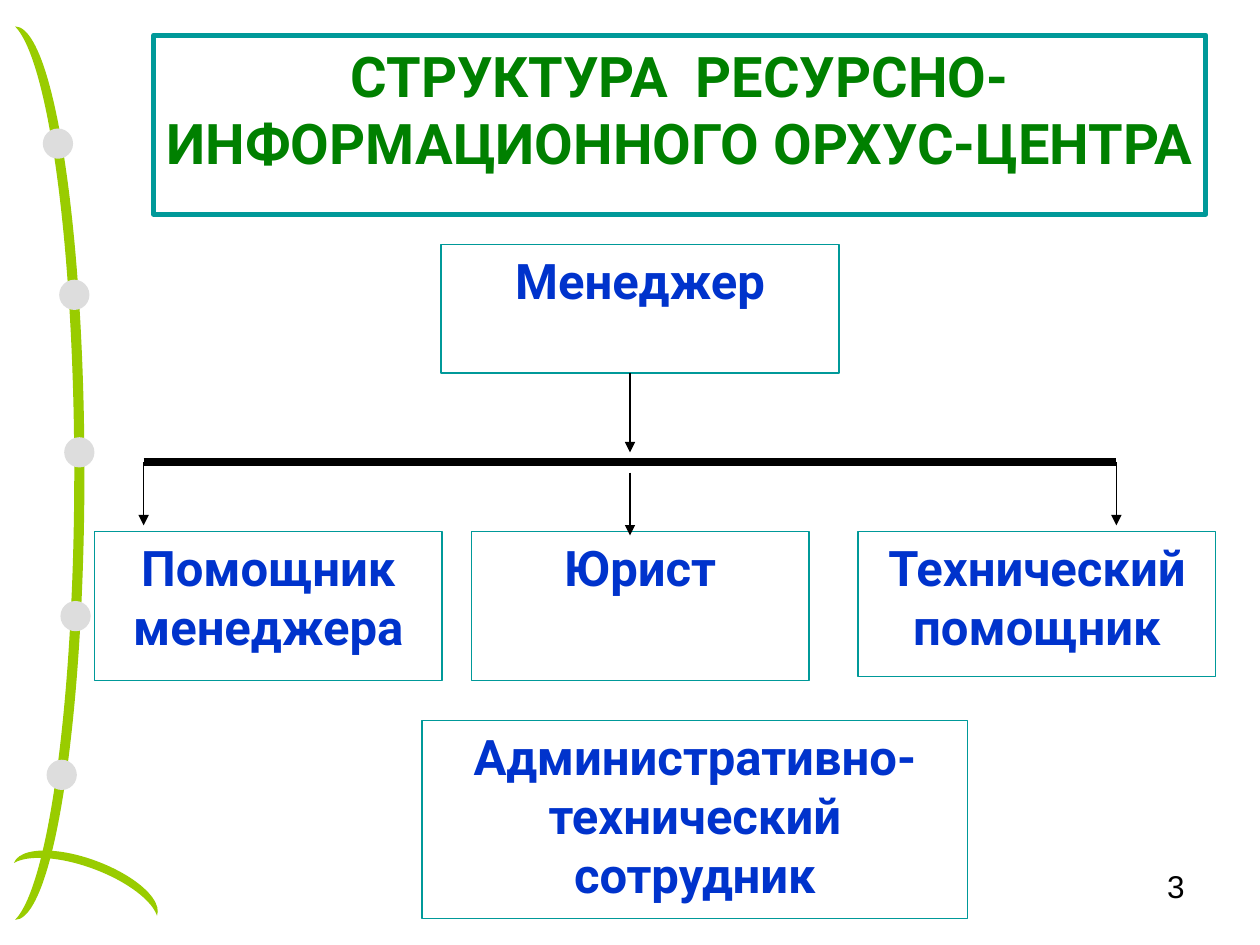
from dataclasses import dataclass

from lxml.etree import SubElement
from pptx import Presentation
from pptx.dml.color import RGBColor
from pptx.enum.shapes import MSO_CONNECTOR as Connector, MSO_SHAPE as Shape
from pptx.enum.text import MSO_ANCHOR as Anchor, MSO_AUTO_SIZE as AutoSize, PP_ALIGN as Align
from pptx.oxml.ns import qn
from pptx.util import Inches, Pt


@dataclass(frozen=True)
class Theme:
    stem: RGBColor = RGBColor(0x99, 0xCC, 0x00)
    bead: RGBColor = RGBColor(0xDD, 0xDD, 0xDD)
    border: RGBColor = RGBColor(0x00, 0x99, 0x99)
    title: RGBColor = RGBColor(0x00, 0x80, 0x00)
    role: RGBColor = RGBColor(0x00, 0x33, 0xCC)
    black: RGBColor = RGBColor(0x00, 0x00, 0x00)
    font: str = "Roboto"
    number_font: str = "Arial"
    title_size: Pt = Pt(32)
    role_size: Pt = Pt(28)
    number_size: Pt = Pt(18)


theme = Theme()


def add_decoration(kind, left, top, width, height, color):
    shape = slide.shapes.add_shape(kind, Inches(left), Inches(top), Inches(width), Inches(height))
    shape.shadow.inherit = False
    shape.fill.solid()
    shape.fill.fore_color.rgb = color
    shape.line.fill.background()
    return shape


def write_text(shape, text, font, size, color, bold=True, align=Align.CENTER):
    frame = shape.text_frame
    frame.text = text
    frame.word_wrap = True
    frame.auto_size = AutoSize.NONE
    frame.vertical_anchor = Anchor.TOP
    for paragraph in frame.paragraphs:
        paragraph.alignment = align
        paragraph.font.name = font
        paragraph.font.size = size
        paragraph.font.bold = bold
        paragraph.font.color.rgb = color


presentation = Presentation()
presentation.slide_width = Inches(10)
presentation.slide_height = Inches(7.5)
slide = presentation.slides.add_slide(presentation.slide_layouts[5])

title = slide.shapes.title
title.left, title.top, title.width, title.height = Inches(1.22), Inches(0.28), Inches(8.35), Inches(1.42)
title.line.color.rgb = theme.border
title.line.width = Pt(3)
write_text(title, "СТРУКТУРА  РЕСУРСНО-ИНФОРМАЦИОННОГО ОРХУС-ЦЕНТРА",
           theme.font, theme.title_size, theme.title)

for left, top, width, height, rotation, thickness in [
    (0.12, 0.21, 0.55, 7.09, 180, 0.147),
    (0.6, 6.34, 0.24, 1.21, 110.2, 0.277),
]:
    stem = add_decoration(Shape.MOON, left, top, width, height, theme.stem)
    stem.rotation = rotation
    stem.adjustments[0] = thickness

for left, top in [(0.34, 1.02), (0.47, 2.22), (0.51, 3.47), (0.48, 4.77), (0.37, 6.03)]:
    add_decoration(Shape.OVAL, left, top, 0.24, 0.24, theme.bead)

for role, left, top, width, height in [
    ("Менеджер", 3.5, 1.94, 3.16, 1.02),
    ("Помощник\nменеджера", 0.75, 4.22, 2.76, 1.18),
    ("Юрист", 3.74, 4.22, 2.68, 1.18),
    ("Технический помощник", 6.81, 4.22, 2.84, 1.15),
    ("Административно-технический сотрудник", 3.35, 5.72, 4.33, 1.57),
]:
    box = slide.shapes.add_shape(Shape.RECTANGLE, Inches(left), Inches(top), Inches(width), Inches(height))
    box.shadow.inherit = False
    box.fill.background()
    box.line.color.rgb = theme.border
    box.line.width = Pt(0.75)
    write_text(box, role, theme.font, theme.role_size, theme.role)

bar_left, bar_middle, bar_right, bar_top = 1.14, 5, 8.86, 3.67
for start_x, start_y, end_x, end_y, weight, has_arrow in [
    (bar_middle, 2.96, bar_middle, 3.59, 0.75, True),
    (bar_left, bar_top, bar_right, bar_top, 4.5, False),
    (bar_left, bar_top, bar_left, 4.17, 0.75, True),
    (bar_middle, 3.75, bar_middle, 4.25, 0.75, True),
    (bar_right, bar_top, bar_right, 4.17, 0.75, True),
]:
    connector = slide.shapes.add_connector(
        Connector.STRAIGHT, Inches(start_x), Inches(start_y), Inches(end_x), Inches(end_y))
    connector.line.color.rgb = theme.black
    connector.line.width = Pt(weight)
    properties = connector._element.spPr
    if has_arrow:
        SubElement(properties.find(qn("a:ln")), qn("a:tailEnd"), type="triangle")
    SubElement(properties, qn("a:effectLst"))

number = slide.shapes.add_textbox(Inches(7.17), Inches(6.83), Inches(2.33), Inches(0.52))
write_text(number, "3", theme.number_font, theme.number_size, theme.black, bold=False, align=Align.RIGHT)

presentation.save("out.pptx")
